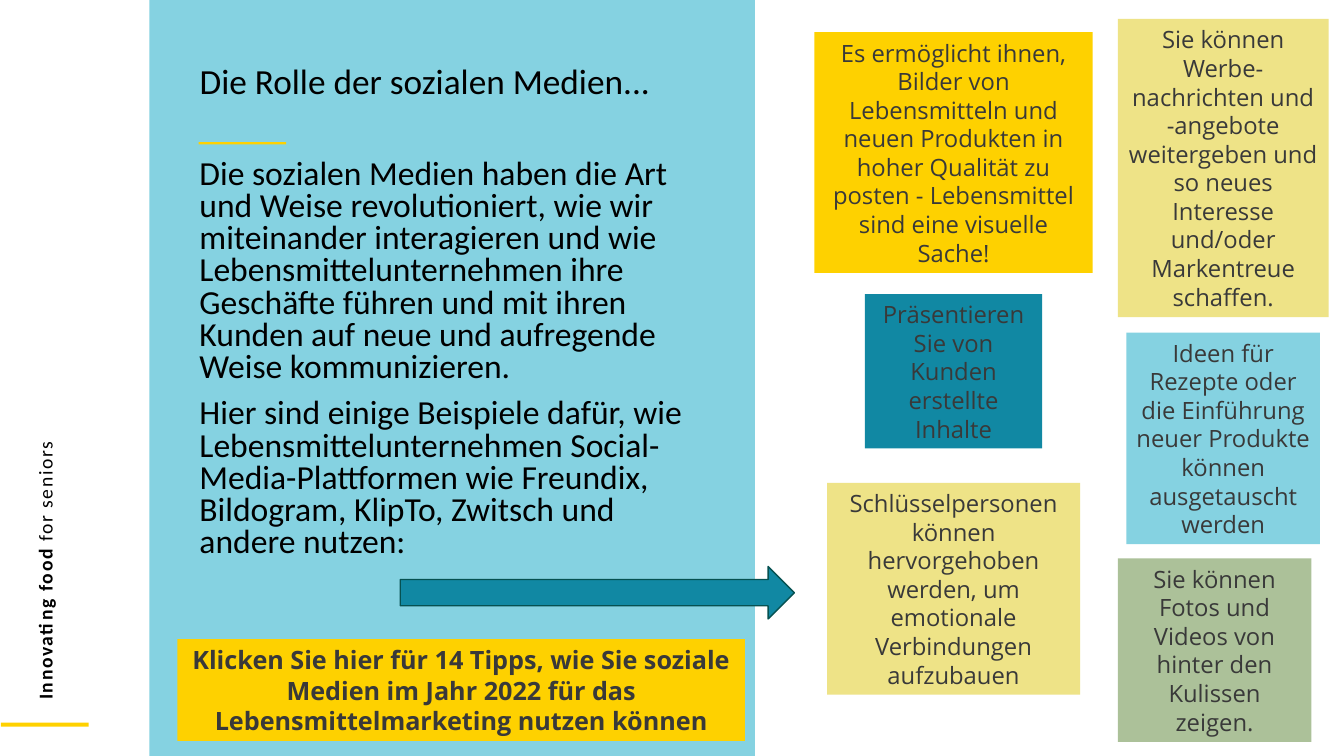
from pptx import Presentation
from pptx.dml.color import RGBColor
from pptx.enum import shapes, text
from pptx.util import Pt

AQUA, YELLOW, TEAL = "85D2E1", "FFD100", "1188A3"
GOLD, CREAM, SAGE = "FED100", "EEE387", "ACC199"
INK, BLACK = "393939", "000000"


def color(code):
    return RGBColor.from_string(code)


def block(slide, box, fill, kind=shapes.MSO_SHAPE.RECTANGLE):
    """Filled shape without outline or shadow."""
    shape = slide.shapes.add_shape(kind, *map(Pt, box))
    shape.shadow.inherit = False
    shape.fill.solid()
    shape.fill.fore_color.rgb = color(fill)
    shape.line.fill.background()
    return shape


def style(font, size, name, shade, bold=False):
    font.size, font.name, font.bold = Pt(size), name, bold
    font.color.rgb = color(shade)


def card(slide, box, fill, words, size=17, bold=False):
    """Coloured box with centred text."""
    frame = block(slide, box, fill).text_frame
    frame.word_wrap = True
    frame.auto_size = text.MSO_AUTO_SIZE.SHAPE_TO_FIT_TEXT
    para = frame.paragraphs[0]
    para.text = words
    para.alignment = text.PP_ALIGN.CENTER
    style(para.font, size, "Open Sans", INK, bold)


def side(slide, x, y, w, h):
    """Vertical tagline and its rule in the left margin."""
    block(slide, (x + 0.7, y + h - 23.8, w, 2.9), YELLOW)
    long, thick = 543, 24.5
    mid = x + 32.4
    label = slide.shapes.add_textbox(
        Pt(mid - long / 2), Pt(y + 223.2), Pt(long), Pt(thick))
    label.rotation = 270
    label.text_frame.word_wrap = True
    para = label.text_frame.paragraphs[0]
    for words, bold in (("Innovating food ", True), ("for seniors", False)):
        run = para.add_run()
        run.text = words
        style(run.font, 14, "Calibri", BLACK, bold)
        run.font._element.set("spc", "110")


def panel(slide, x, y, w, h):
    """Aqua panel with title, body text, arrow and tip."""
    block(slide, (x, y, w, h), AQUA)
    block(slide, (x + 35.3, y + 101.5, 62.6, 1.6), YELLOW)

    # Title
    title = slide.shapes.title
    title.left, title.top = Pt(x + 28.8), Pt(y + 46.8)
    title.width, title.height = Pt(371.5), Pt(46)
    frame = title.text_frame
    frame.word_wrap = True
    frame.auto_size = text.MSO_AUTO_SIZE.NONE
    frame.vertical_anchor = text.MSO_ANCHOR.TOP
    para = frame.paragraphs[0]
    para.text = "Die Rolle der sozialen Medien..."
    para.alignment = text.PP_ALIGN.LEFT
    para.line_spacing = 0.7
    style(para.font, 25.2, "Calibri", BLACK)

    # Body
    body = slide.shapes.add_textbox(
        Pt(x + 28.8), Pt(y + 110.2), Pt(365), Pt(309))
    frame = body.text_frame
    frame.word_wrap = True
    lines = (
        "Die sozialen Medien haben die Art und Weise revolutioniert, wie wir "
        "miteinander interagieren und wie Lebensmittelunternehmen ihre "
        "Geschäfte führen und mit ihren Kunden auf neue und aufregende Weise "
        "kommunizieren.",
        "Hier sind einige Beispiele dafür, wie Lebensmittelunternehmen "
        "Social-Media-Plattformen wie Freundix, Bildogram, KlipTo, Zwitsch "
        "und andere nutzen:",
    )
    for i, words in enumerate(lines):
        para = frame.add_paragraph() if i else frame.paragraphs[0]
        para.text = words
        para.line_spacing = 0.8
        para.space_before = Pt(10 if i else 0)
        style(para.font, 24, "Calibri", BLACK)

    # Arrow and tip
    arrow = block(slide, (x + 179.3, y + 404.6, 281.5, 37.5), TEAL,
                  shapes.MSO_SHAPE.RIGHT_ARROW)
    arrow.line.color.rgb = color("065151")
    arrow.line.width = Pt(1)
    card(slide, (x + 20.2, y + 456.5, 405.4, 72.7), GOLD,
         "Klicken Sie hier für 14 Tipps, wie Sie soziale Medien im Jahr 2022 "
         "für das Lebensmittelmarketing nutzen können", 18, True)


def stack(slide, x, y, w, h, cards):
    """Column of cards centred in the box, each with its own shift."""
    for top, wide, high, shift, fill, words in cards:
        left = x + (w - wide) / 2 + shift
        card(slide, (left, y + top, wide, high), fill, words)


def main():
    deck = Presentation()
    deck.slide_width, deck.slide_height = Pt(960), Pt(540)
    slide = deck.slides.add_slide(deck.slide_layouts[5])

    side(slide, 0, 0, 62.6, 540)
    panel(slide, 106.6, 0, 432.7, 543)
    # Examples: top, width, height, shift, fill, words
    stack(slide, 581.8, 0, 198.7, 540, (
        (23, 198.7, 172, 0, GOLD,
         "Es ermöglicht ihnen, Bilder von Lebensmitteln und neuen Produkten "
         "in hoher Qualität zu posten - Lebensmittel sind eine visuelle "
         "Sache!"),
        (210.2, 126.7, 110.2, 0, TEAL,
         "Präsentieren Sie von Kunden erstellte Inhalte"),
        (345, 180.7, 151.2, 0, CREAM,
         "Schlüsselpersonen können hervorgehoben werden, um emotionale "
         "Verbindungen aufzubauen"),
    ))
    stack(slide, 798.5, 0, 150.5, 540, (
        (13.5, 150.5, 213, 0, CREAM,
         "Sie können Werbe-nachrichten und -angebote weitergeben und so "
         "neues Interesse und/oder Markentreue schaffen."),
        (237.6, 138.2, 151.2, 0, AQUA,
         "Ideen für Rezepte oder die Einführung neuer Produkte können "
         "ausgetauscht werden"),
        (398.9, 138.2, 131, -6.2, SAGE,
         "Sie können Fotos und Videos von hinter den Kulissen zeigen."),
    ))

    # Bring the title in front of the panel
    tree = slide.shapes._spTree
    tree.append(slide.shapes.title._element)
    deck.save("out.pptx")


if __name__ == "__main__":
    main()
